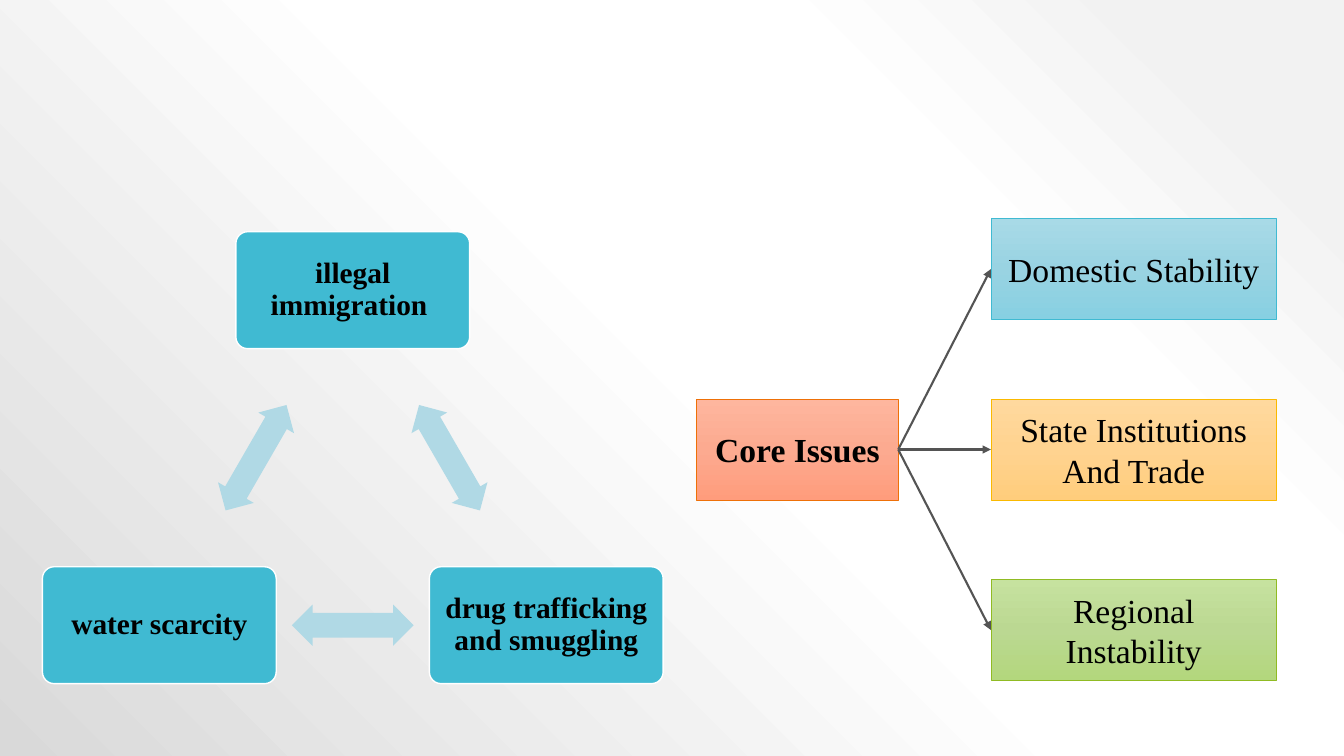
from pptx import Presentation
from pptx.dml.color import RGBColor
from pptx.enum.shapes import MSO_CONNECTOR as CONN, MSO_SHAPE as SHAPE
from pptx.enum.text import MSO_ANCHOR as ANCHOR, PP_ALIGN as ALIGN
from pptx.oxml import parse_xml
from pptx.oxml.ns import nsdecls, qn
from pptx.util import Pt

BLACK = RGBColor(0x00, 0x00, 0x00)
WHITE = RGBColor(0xFF, 0xFF, 0xFF)
PALE_GREY = RGBColor(0xF2, 0xF2, 0xF2)
MID_GREY = RGBColor(0xD9, 0xD9, 0xD9)
DARK_GREY = RGBColor(0x54, 0x54, 0x54)
TEAL = RGBColor(0x40, 0xBA, 0xD2)
PALE_TEAL = RGBColor(0xB0, 0xD9, 0xE5)
ORANGE = RGBColor(0xEE, 0x70, 0x08)
GOLD = RGBColor(0xFA, 0xB9, 0x00)
GREEN = RGBColor(0x90, 0xBB, 0x23)
ORANGE_TINTS = (RGBColor(0xFE, 0xB6, 0x9E), RGBColor(0xFC, 0xAA, 0x90), RGBColor(0xFF, 0x9C, 0x7C))
TEAL_TINTS = (RGBColor(0xA8, 0xDA, 0xE7), RGBColor(0x99, 0xD3, 0xE2), RGBColor(0x87, 0xD0, 0xE2))
GOLD_TINTS = (RGBColor(0xFF, 0xD9, 0x9E), RGBColor(0xFF, 0xD3, 0x90), RGBColor(0xFF, 0xCD, 0x7C))
GREEN_TINTS = (RGBColor(0xC6, 0xE2, 0x9F), RGBColor(0xBB, 0xD8, 0x92), RGBColor(0xB3, 0xD7, 0x7D))

DOWNWARD = '<a:lin ang="5400000" scaled="0"/>'
FROM_TOP_RIGHT = '<a:path path="circle"><a:fillToRect l="100000" b="100000"/></a:path>'


def write(sp, text, size=24, bold=False, font="Times New Roman", color=BLACK,
          spacing=None, inset=None):
    tf = sp.text_frame
    tf.word_wrap = True
    tf.vertical_anchor = ANCHOR.MIDDLE
    if inset is not None:
        tf.margin_left = tf.margin_right = tf.margin_top = tf.margin_bottom = Pt(inset)
    p = tf.paragraphs[0]
    p.alignment = ALIGN.CENTER
    if spacing is not None:
        p.line_spacing = spacing
    r = p.add_run()
    r.text = text
    r.font.name = font
    r.font.size = Pt(size)
    r.font.bold = bold
    r.font.color.rgb = color


def set_gradient(fill, element, stops, direction):
    fill.gradient()
    old = element.find(".//" + qn("a:gradFill"))
    stop_xml = "".join(
        f'<a:gs pos="{pos * 1000}"><a:srgbClr val="{color}"/></a:gs>' for pos, color in stops)
    old.getparent().replace(old, parse_xml(
        f'<a:gradFill {nsdecls("a")} rotWithShape="1"><a:gsLst>{stop_xml}</a:gsLst>'
        f"{direction}</a:gradFill>"))


class Deck:
    card_size = (167, 83.5)
    arrow_size = (87, 29.5)

    def __init__(self, prs):
        self.s = prs.slides.add_slide(prs.slide_layouts[6])

    def background(self, stops):
        set_gradient(self.s.background.fill, self.s.element, stops, FROM_TOP_RIGHT)

    def shape(self, kind, x, y, w, h, line=None, width=1):
        sp = self.s.shapes.add_shape(kind, Pt(x), Pt(y), Pt(w), Pt(h))
        sp.shadow.inherit = False
        if line is None:
            sp.line.fill.background()
        else:
            sp.line.color.rgb = line
            sp.line.width = Pt(width)
        return sp

    def card(self, cx, cy, text):
        w, h = self.card_size
        sp = self.shape(SHAPE.ROUNDED_RECTANGLE, cx - w / 2, cy - h / 2, w, h, WHITE)
        sp.adjustments[0] = 0.1
        sp.fill.solid()
        sp.fill.fore_color.rgb = TEAL
        write(sp, text, size=21, bold=True, spacing=0.9, inset=6.3)

    def double_arrow(self, cx, cy, angle):
        w, h = self.arrow_size
        sp = self.shape(SHAPE.LEFT_RIGHT_ARROW, cx - w / 2, cy - h / 2, w, h)
        sp.adjustments[0], sp.adjustments[1] = 0.6, 0.5
        sp.rotation = angle
        sp.fill.solid()
        sp.fill.fore_color.rgb = PALE_TEAL

    def box(self, x, y, w, h, text, tints, line, bold=False):
        sp = self.shape(SHAPE.RECTANGLE, x, y, w, h, line, 0.5)
        set_gradient(sp.fill, sp.element, zip((0, 50, 100), tints), DOWNWARD)
        write(sp, text, bold=bold)
        return sp

    def arrow(self, start, end):
        c = self.s.shapes.add_connector(CONN.STRAIGHT, 0, 0, 0, 0)
        c.begin_connect(start, 3)
        c.end_connect(end, 1)
        c.line.color.rgb = DARK_GREY
        c.line.width = Pt(1.5)
        c.line._get_or_add_ln().append(
            parse_xml(f'<a:tailEnd {nsdecls("a")} type="triangle"/>'))
        c.element.spPr.append(parse_xml(f'<a:effectLst {nsdecls("a")}/>'))


def main():
    prs = Presentation()
    prs.slide_width, prs.slide_height = Pt(960), Pt(540)
    deck = Deck(prs)
    deck.background([(10, PALE_GREY), (28, WHITE), (48, WHITE), (100, MID_GREY)])

    threats = [
        (252, 207.3, "illegal immigration "),
        (390.2, 446.6, "drug trafficking and smuggling"),
        (113.8, 446.6, "water scarcity"),
    ]
    for i, (cx, cy, text) in enumerate(threats):
        next_x, next_y, _ = threats[(i + 1) % len(threats)]
        deck.card(cx, cy, text)
        deck.double_arrow((cx + next_x) / 2, (cy + next_y) / 2, 60 + 120 * i)

    core = deck.box(497.6, 285.1, 144, 72, "Core Issues", ORANGE_TINTS, ORANGE, bold=True)
    issues = [
        ("Domestic Stability", TEAL_TINTS, TEAL),
        ("State Institutions And Trade", GOLD_TINTS, GOLD),
        ("Regional Instability", GREEN_TINTS, GREEN),
    ]
    boxes = [deck.box(707.8, 156.2 + 128.9 * i, 204, 72, *issue)
             for i, issue in enumerate(issues)]
    for issue_box in boxes:
        deck.arrow(core, issue_box)

    prs.save("out.pptx")


if __name__ == "__main__":
    main()
